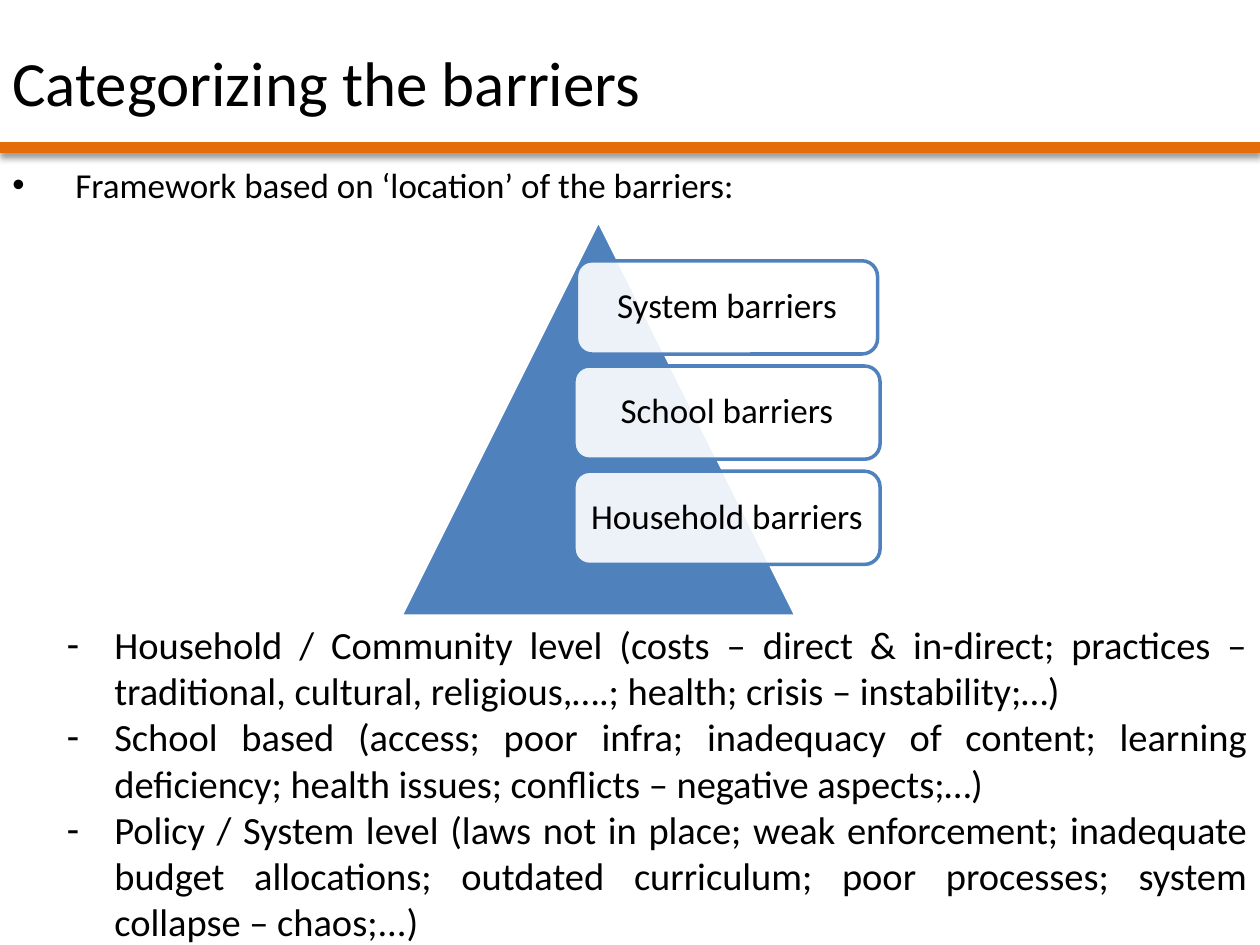
from pptx import Presentation
from pptx.dml.color import RGBColor
from pptx.enum.shapes import MSO_CONNECTOR, MSO_SHAPE
from pptx.enum.text import MSO_ANCHOR, PP_ALIGN
from pptx.oxml.ns import qn
from pptx.util import Inches, Pt
from lxml.etree import SubElement

# Content
TITLE = "Categorizing the barriers"
FRAMEWORK = ["Framework based on ‘location’ of the barriers:"]
LEVELS = [
    "Household / Community level (costs – direct & in-direct; practices – "
    "traditional, cultural, religious,….; health; crisis – instability;…)",
    "School based (access; poor infra; inadequacy of content; learning "
    "deficiency; health issues; conflicts – negative aspects;…)",
    "Policy / System level (laws not in place; weak enforcement; inadequate "
    "budget allocations; outdated curriculum; poor processes; system "
    "collapse – chaos;...)",
]
# Label and box width
BARRIERS = [("System barriers", 2.39), ("School barriers", 2.43),
            ("Household barriers", 2.43)]

BLACK, WHITE, BLUE, ORANGE = "000000", "FFFFFF", "4F81BD", "E46C0A"
BOX_CENTER, BOX_TOP, BOX_HEIGHT, BOX_PITCH = 5.77, 2.07, 0.74, 0.835


def color(value):
    return RGBColor.from_string(value)


def set_font(paragraph, size):
    paragraph.font.color.rgb = color(BLACK)
    for name, value in {"name": "Calibri", "size": Pt(size)}.items():
        setattr(paragraph.font, name, value)


def add_text(slide, box, texts, size, anchor=MSO_ANCHOR.TOP, bullet=None,
             margin=0, hanging=0):
    frame = slide.shapes.add_textbox(*map(Inches, box)).text_frame
    for name, value in {"word_wrap": True, "vertical_anchor": anchor}.items():
        setattr(frame, name, value)
    for index, text in enumerate(texts):
        paragraph = frame.paragraphs[0] if index == 0 else frame.add_paragraph()
        paragraph.text = text
        if bullet:
            paragraph.alignment = PP_ALIGN.JUSTIFY
            properties = paragraph._p.get_or_add_pPr()
            properties.set("marL", str(Inches(margin)))
            properties.set("indent", str(-Inches(hanging)))
            SubElement(properties, qn("a:buFont"), typeface="Arial")
            SubElement(properties, qn("a:buChar"), char=bullet)
        set_font(paragraph, size)


def add_shape(slide, kind, box, fill, line):
    shape = slide.shapes.add_shape(kind, *map(Inches, box))
    shape.shadow.inherit = False
    shape.fill.solid()
    shape.fill.fore_color.rgb = color(fill)
    shape.line.color.rgb = color(line)
    shape.line.width = Pt(2)
    return shape


def add_rule(slide):
    rule = slide.shapes.add_connector(
        MSO_CONNECTOR.STRAIGHT, *map(Inches, (0, 1.17, 10, 1.17)))
    rule.line.color.rgb = color(ORANGE)
    rule.line.width = Pt(6)
    effects = SubElement(rule._element.spPr, qn("a:effectLst"))
    shadow = SubElement(effects, qn("a:outerShdw"), blurRad=str(Pt(4)),
                        dist=str(Pt(3)), dir="5400000", rotWithShape="0")
    shade = SubElement(shadow, qn("a:srgbClr"), val=BLACK)
    SubElement(shade, qn("a:alpha"), val="40000")


def add_barrier(slide, label, width, top):
    box = (BOX_CENTER - width / 2, top, width, BOX_HEIGHT)
    shape = add_shape(slide, MSO_SHAPE.ROUNDED_RECTANGLE, box, WHITE, BLUE)
    fill = shape._element.spPr.find(qn("a:solidFill"))
    SubElement(fill[0], qn("a:alpha"), val="90000")
    frame = shape.text_frame
    formats = {"word_wrap": True, "vertical_anchor": MSO_ANCHOR.MIDDLE,
               "margin_left": Inches(0.05), "margin_right": Inches(0.05)}
    for name, value in formats.items():
        setattr(frame, name, value)
    paragraph = frame.paragraphs[0]
    paragraph.text = label
    paragraph.alignment = PP_ALIGN.CENTER
    paragraph.line_spacing = 0.9
    set_font(paragraph, 20)


def main():
    presentation = Presentation()
    presentation.slide_width = Inches(10)
    presentation.slide_height = Inches(7.5)
    slide = presentation.slides.add_slide(presentation.slide_layouts[6])

    # Heading and body text
    add_rule(slide)
    add_text(slide, (0, 0.17, 9, 0.95), [TITLE], 36, MSO_ANCHOR.MIDDLE)
    add_text(slide, (0, 1.25, 10, 0.45), FRAMEWORK, 20,
             bullet="•", margin=0.5, hanging=0.5)
    add_text(slide, (0, 4.88, 10, 2.62), LEVELS, 22,
             bullet="-", margin=0.81, hanging=0.38)

    # Pyramid with its barrier boxes
    add_shape(slide, MSO_SHAPE.ISOSCELES_TRIANGLE, (3.18, 1.75, 3.14, 3.14),
              BLUE, WHITE)
    for index, (label, width) in enumerate(BARRIERS):
        add_barrier(slide, label, width, BOX_TOP + index * BOX_PITCH)

    presentation.save("out.pptx")


if __name__ == "__main__":
    main()
